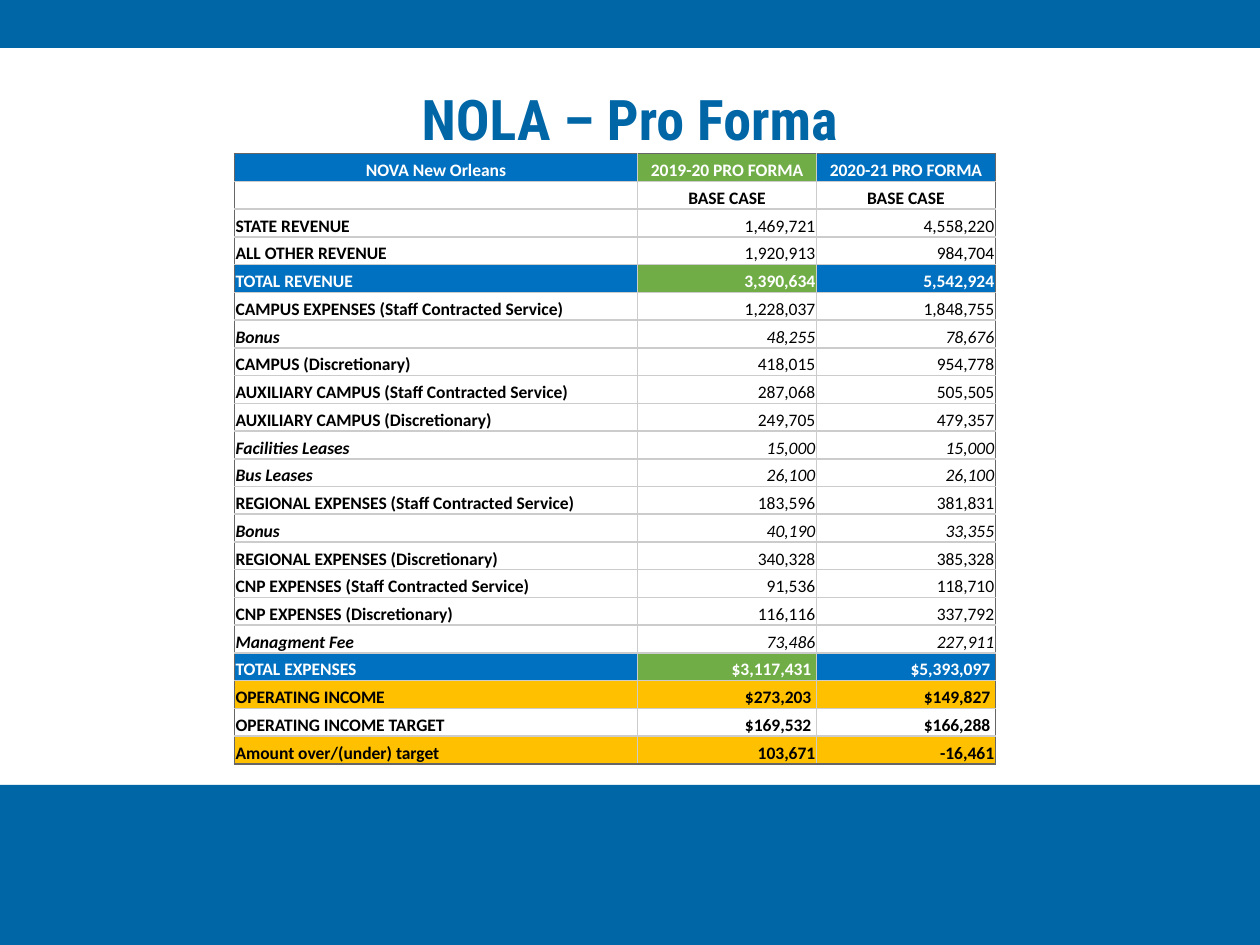
from dataclasses import dataclass

from lxml import etree
from pptx import Presentation
from pptx.dml.color import RGBColor
from pptx.enum.shapes import MSO_SHAPE
from pptx.enum.text import MSO_ANCHOR, PP_ALIGN
from pptx.oxml.ns import qn
from pptx.util import Inches, Pt

RECTANGLE = MSO_SHAPE.RECTANGLE
LEFT, CENTER, RIGHT = PP_ALIGN.LEFT, PP_ALIGN.CENTER, PP_ALIGN.RIGHT
MIDDLE, BOTTOM = MSO_ANCHOR.MIDDLE, MSO_ANCHOR.BOTTOM


@dataclass(frozen=True)
class Theme:
    band: str = "0066A6"
    blue: str = "0070C0"
    green: str = "70AD47"
    gold: str = "FFC000"
    white: str = "FFFFFF"
    black: str = "000000"
    outer_line: str = "666666"
    inner_line: str = "CCCCCC"
    title_font: str = "Roboto Condensed"
    table_font: str = "Calibri"
    title_size: int = 32
    table_size: int = 10
    line_width: int = 1


THEME = Theme()

# Row styles: cell fills, text colour, bold numbers, italic
TOTAL_FILLS = (THEME.blue, THEME.green, THEME.blue)
NO_FILLS = (None,) * 3
STYLES = {
    "header": (TOTAL_FILLS, THEME.white, True, False),
    "case": (NO_FILLS, THEME.black, True, False),
    "line": (NO_FILLS, THEME.black, False, False),
    "detail": (NO_FILLS, THEME.black, False, True),
    "total": (TOTAL_FILLS, THEME.white, True, False),
    "result": ((THEME.gold,) * 3, THEME.black, True, False),
    "target": (NO_FILLS, THEME.black, True, False),
}
CENTERED_STYLES = ("header", "case")

ROWS = [
    ("header", "NOVA New Orleans", "2019-20 PRO FORMA", "2020-21 PRO FORMA"),
    ("case", "", "BASE CASE", "BASE CASE"),
    ("line", "STATE REVENUE", "1,469,721", "4,558,220"),
    ("line", "ALL OTHER REVENUE", "1,920,913", "984,704"),
    ("total", "TOTAL REVENUE", "3,390,634", "5,542,924"),
    ("line", "CAMPUS EXPENSES (Staff Contracted Service)", "1,228,037", "1,848,755"),
    ("detail", "Bonus", "48,255", "78,676"),
    ("line", "CAMPUS (Discretionary)", "418,015", "954,778"),
    ("line", "AUXILIARY CAMPUS (Staff Contracted Service)", "287,068", "505,505"),
    ("line", "AUXILIARY CAMPUS (Discretionary)", "249,705", "479,357"),
    ("detail", "Facilities Leases", "15,000", "15,000"),
    ("detail", "Bus Leases", "26,100", "26,100"),
    ("line", "REGIONAL EXPENSES (Staff Contracted Service)", "183,596", "381,831"),
    ("detail", "Bonus", "40,190", "33,355"),
    ("line", "REGIONAL EXPENSES (Discretionary)", "340,328", "385,328"),
    ("line", "CNP EXPENSES (Staff Contracted Service)", "91,536", "118,710"),
    ("line", "CNP EXPENSES (Discretionary)", "116,116", "337,792"),
    ("detail", "Managment Fee", "73,486", "227,911"),
    ("total", "TOTAL EXPENSES", "$3,117,431 ", "$5,393,097 "),
    ("result", "OPERATING INCOME", "$273,203 ", "$149,827 "),
    ("target", "OPERATING INCOME TARGET", "$169,532 ", "$166,288 "),
    ("result", "Amount over/(under) target", "103,671", "-16,461"),
]
COLUMN_WIDTHS = (3.2, 1.42, 1.42)
TABLE_HEIGHT = 4.85


def apply_format(target, values):
    for name, value in values.items():
        setattr(target, name, value)


def write_text(paragraph, text, alignment, color, **font_values):
    paragraph.alignment = alignment
    if not text:
        # An empty line still needs its type size to keep the row height
        size = str(font_values["size"].centipoints)
        etree.SubElement(paragraph._p, qn("a:endParaRPr"), sz=size)
        return
    run = paragraph.add_run()
    run.text = text
    apply_format(run.font, font_values)
    run.font.color.rgb = RGBColor.from_string(color)


def add_band(slide, top, height):
    shape = slide.shapes.add_shape(
        RECTANGLE, 0, Inches(top), Inches(10), Inches(height))
    shape.shadow.inherit = False
    shape.fill.solid()
    shape.fill.fore_color.rgb = RGBColor.from_string(THEME.band)
    shape.line.fill.background()


def add_title(slide, text):
    box = slide.shapes.add_textbox(
        Inches(0.5), Inches(0.32), Inches(9), Inches(1.23))
    apply_format(box.text_frame, {"word_wrap": True, "vertical_anchor": MIDDLE})
    write_text(box.text_frame.paragraphs[0], text, CENTER, THEME.band,
               name=THEME.title_font, size=Pt(THEME.title_size), bold=True)


def set_borders(cell, outer_sides):
    properties = cell._tc.get_or_add_tcPr()
    for side in "LRTB":
        color = THEME.outer_line if side in outer_sides else THEME.inner_line
        line = etree.SubElement(properties, qn(f"a:ln{side}"),
                                w=str(Pt(THEME.line_width)))
        fill = etree.SubElement(line, qn("a:solidFill"))
        etree.SubElement(fill, qn("a:srgbClr"), val=color)


def set_fill(cell, color):
    if color is None:
        cell.fill.background()
        return
    cell.fill.solid()
    cell.fill.fore_color.rgb = RGBColor.from_string(color)


def fill_cell(cell, text, row, column, style):
    fills, color, bold_numbers, italic = STYLES[style]
    apply_format(cell, {
        "margin_left": Inches(0.01), "margin_right": Inches(0.01),
        "margin_top": Inches(0.01), "margin_bottom": 0,
        "vertical_anchor": BOTTOM,
    })
    edges = {"L": column == 0, "R": column == len(COLUMN_WIDTHS) - 1,
             "T": row == 0, "B": row == len(ROWS) - 1}
    set_borders(cell, [side for side, is_outer in edges.items() if is_outer])
    set_fill(cell, fills[column])
    if style in CENTERED_STYLES:
        alignment = CENTER
    else:
        alignment = LEFT if column == 0 else RIGHT
    write_text(cell.text_frame.paragraphs[0], text, alignment, color,
               name=THEME.table_font, size=Pt(THEME.table_size),
               bold=column == 0 or bold_numbers, italic=italic)


def add_pro_forma_table(slide):
    frame = slide.shapes.add_table(
        len(ROWS), len(COLUMN_WIDTHS), Inches(1.86), Inches(1.22),
        Inches(sum(COLUMN_WIDTHS)), Inches(TABLE_HEIGHT))
    table = frame.table
    apply_format(table, {"first_row": False, "horz_banding": False})
    for column, width in zip(table.columns, COLUMN_WIDTHS):
        column.width = Inches(width)
    for row, (style, *texts) in enumerate(ROWS):
        table.rows[row].height = Inches(TABLE_HEIGHT / len(ROWS))
        for column, text in enumerate(texts):
            fill_cell(table.cell(row, column), text, row, column, style)


def main():
    presentation = Presentation()
    presentation.slide_width = Inches(10)
    presentation.slide_height = Inches(7.5)
    slide = presentation.slides.add_slide(presentation.slide_layouts[6])

    # Top and bottom bands
    add_band(slide, 0, 0.38)
    add_band(slide, 6.23, 1.27)

    # Title and budget table
    add_title(slide, "NOLA – Pro Forma")
    add_pro_forma_table(slide)

    presentation.save("out.pptx")


if __name__ == "__main__":
    main()
